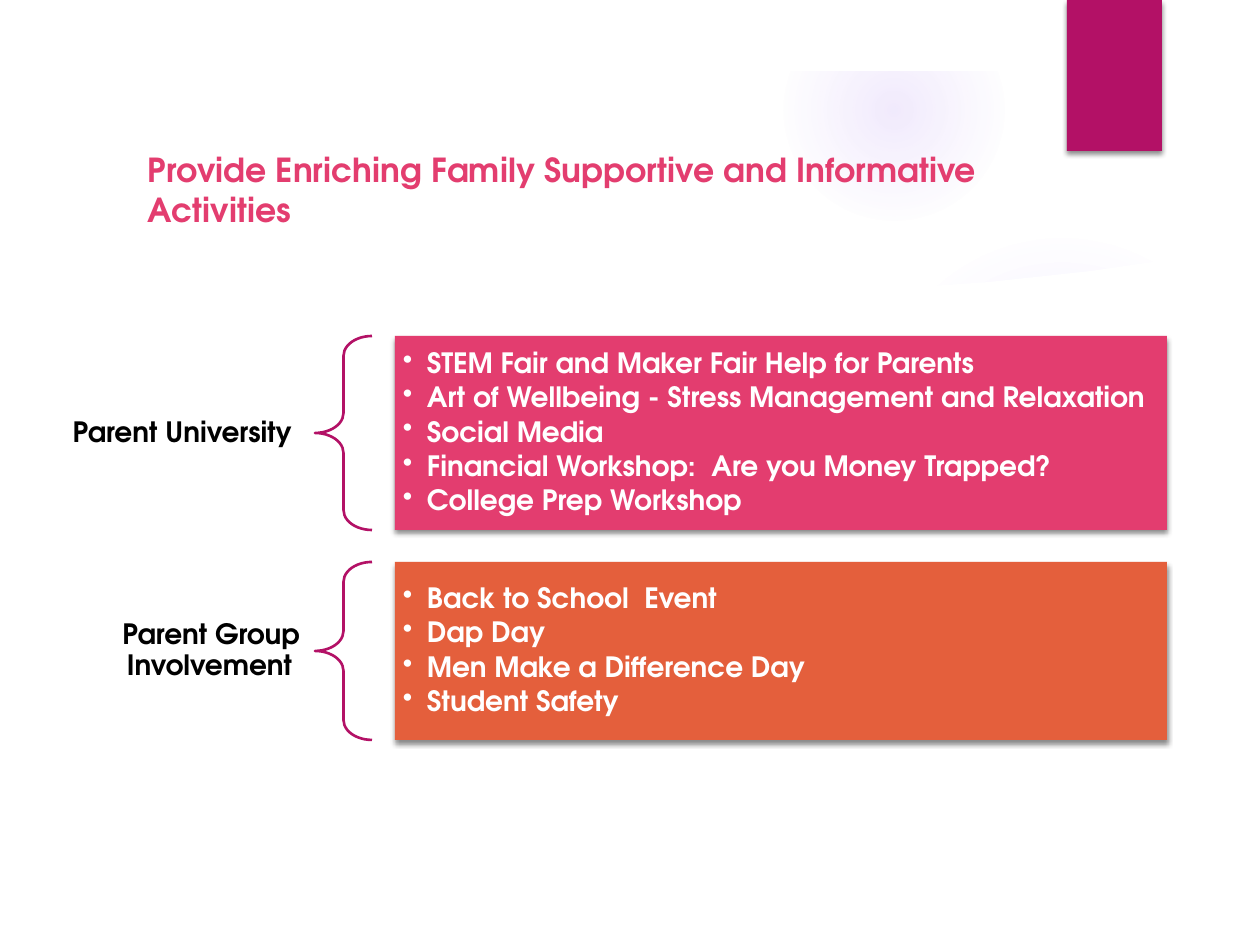
"""Build the slide on family supportive and informative activities."""
from lxml import etree
from pptx import Presentation
from pptx.dml.color import RGBColor
from pptx.enum.shapes import MSO_SHAPE
from pptx.enum.text import MSO_ANCHOR, MSO_AUTO_SIZE, PP_ALIGN
from pptx.oxml import parse_xml
from pptx.oxml.ns import nsdecls, qn
from pptx.util import Pt

RECT, OVAL, BRACE = MSO_SHAPE.RECTANGLE, MSO_SHAPE.OVAL, MSO_SHAPE.LEFT_BRACE
MIDDLE, BOTTOM = MSO_ANCHOR.MIDDLE, MSO_ANCHOR.BOTTOM
LEFT, RIGHT = PP_ALIGN.LEFT, PP_ALIGN.RIGHT

WHITE = RGBColor(0xFF, 0xFF, 0xFF)
BLACK = RGBColor(0x00, 0x00, 0x00)
MAGENTA = RGBColor(0xB3, 0x11, 0x66)
PINK = RGBColor(0xE3, 0x3D, 0x6F)
ORANGE = RGBColor(0xE4, 0x5F, 0x3C)
GLOW = RGBColor(0x9B, 0x6B, 0xF2)

FONT = "TeX Gyre Adventor"
PX = 914400 // 126
WIDTH, HEIGHT = 1260, 945

TITLE = "Provide Enriching Family Supportive and Informative Activities"
SECTIONS = [
    ("Parent University ", PINK, 336, 194, [
        "STEM Fair and Maker Fair Help for Parents",
        "Art of Wellbeing - Stress Management and Relaxation",
        "Social Media",
        "Financial Workshop:  Are you Money Trapped?",
        "College Prep Workshop",
    ]),
    ("Parent Group Involvement ", ORANGE, 562, 178, [
        "Back to School  Event",
        "Dap Day",
        "Men Make a Difference Day",
        "Student Safety",
    ]),
]

GLOWS = [
    ((868, 231, 388, 388), [(0, 7), (36, 6), (69, 0)]),
    ((784, 0, 220, 220), [(0, 14), (36, 7), (73, 0)]),
]
PANEL = [
    (67, 256), (67, 881), (1193, 881), (1193, 256), (1091, 271), (989, 282),
    (887, 289), (788, 294), (691, 295), (597, 295), (509, 293), (426, 290),
    (349, 285), (280, 280), (218, 273), (166, 268), (125, 263), (93, 260),
]
FRAME = [
    [(0, 0), (0, HEIGHT), (WIDTH, HEIGHT), (WIDTH, 0)],
    [(1191, 876), (1191, 71), (71, 71), (71, 876)],
]
TAB = (1067, 0, 95, 151)


def emu(*lengths):
    return [length * PX for length in lengths]


def add_shape(slide, kind, box, fill=None):
    shape = slide.shapes.add_shape(kind, *emu(*box))
    shape.shadow.inherit = False
    shape.line.fill.background()
    if fill is None:
        shape.fill.background()
    else:
        shape.fill.solid()
        shape.fill.fore_color.rgb = fill
    return shape


def add_shadow(shape):
    effects = shape._element.spPr.find(qn("a:effectLst"))
    effects.append(parse_xml(
        f'<a:outerShdw {nsdecls("a")} blurRad="{Pt(3)}" dist="{Pt(2)}" dir="5400000" '
        'rotWithShape="0"><a:srgbClr val="000000"><a:alpha val="45000"/></a:srgbClr>'
        '</a:outerShdw>'))


def add_glow(slide, box, stops):
    glow = add_shape(slide, OVAL, box)
    stop_xml = "".join(
        f'<a:gs pos="{position * 1000}"><a:srgbClr val="{GLOW}">'
        f'<a:alpha val="{alpha * 1000}"/></a:srgbClr></a:gs>'
        for position, alpha in stops)
    gradient = parse_xml(
        f'<a:gradFill {nsdecls("a")}><a:gsLst>{stop_xml}</a:gsLst><a:path path="circle">'
        '<a:fillToRect l="50000" t="50000" r="50000" b="50000"/></a:path></a:gradFill>')
    properties = glow._element.spPr
    properties.replace(properties.find(qn("a:noFill")), gradient)


def add_outline(slide, contours):
    builder = slide.shapes.build_freeform(*contours[0][0], scale=PX)
    for number, contour in enumerate(contours):
        if number:
            builder.move_to(*contour[0])
        builder.add_line_segments(contour[1:], close=True)
    outline = builder.convert_to_shape()
    outline.shadow.inherit = False
    outline.fill.solid()
    outline.fill.fore_color.rgb = WHITE
    outline.line.fill.background()


def set_frame(frame, anchor, insets):
    frame.word_wrap = True
    frame.auto_size = MSO_AUTO_SIZE.NONE
    frame.vertical_anchor = anchor
    (frame.margin_left, frame.margin_top,
     frame.margin_right, frame.margin_bottom) = emu(*insets)


def set_font(paragraph, size, color):
    font = paragraph.font
    font.name, font.size, font.bold = FONT, Pt(size), True
    font.color.rgb = color


def add_bullet(paragraph):
    properties = paragraph._p.get_or_add_pPr()
    properties.set("marL", str(24 * PX))
    properties.set("indent", str(-24 * PX))
    etree.SubElement(properties, qn("a:buChar")).set("char", "•")


def add_title(slide):
    title = slide.shapes.title
    slide.shapes._spTree.append(title._element)
    title.left, title.top, title.width, title.height = emu(135, 105, 906, 126)
    frame = title.text_frame
    frame.text = TITLE
    set_frame(frame, BOTTOM, (13, 0, 13, 2))
    paragraph = frame.paragraphs[0]
    paragraph.alignment = LEFT
    set_font(paragraph, 18.9, PINK)


def add_section(slide, label, color, top, height, items):
    label_frame = slide.shapes.add_textbox(*emu(31, top, 284, height)).text_frame
    set_frame(label_frame, MIDDLE, (15, 5, 15, 5))
    label_frame.text = label
    paragraph = label_frame.paragraphs[0]
    paragraph.alignment, paragraph.line_spacing = RIGHT, 0.9
    set_font(paragraph, 16, BLACK)

    brace = add_shape(slide, BRACE, (315, top, 57, height))
    brace.adjustments[0], brace.adjustments[1] = 0.35, 0.5
    brace.line.color.rgb, brace.line.width = MAGENTA, Pt(1.5)

    card = add_shape(slide, RECT, (395, top, 772, height), color)
    add_shadow(card)
    frame = card.text_frame
    set_frame(frame, MIDDLE, (8, 8, 8, 8))
    frame.text = "\n".join(items)
    for paragraph in frame.paragraphs:
        paragraph.alignment, paragraph.line_spacing = LEFT, 0.9
        paragraph.space_after = Pt(2.4)
        add_bullet(paragraph)
        set_font(paragraph, 16, WHITE)


def main():
    deck = Presentation()
    deck.slide_width, deck.slide_height = emu(WIDTH, HEIGHT)
    slide = deck.slides.add_slide(deck.slide_layouts[5])
    for box, stops in GLOWS:
        add_glow(slide, box, stops)
    add_outline(slide, [PANEL])
    add_outline(slide, FRAME)
    add_shadow(add_shape(slide, RECT, TAB, MAGENTA))
    add_title(slide)
    for section in SECTIONS:
        add_section(slide, *section)
    deck.save("out.pptx")


if __name__ == "__main__":
    main()
